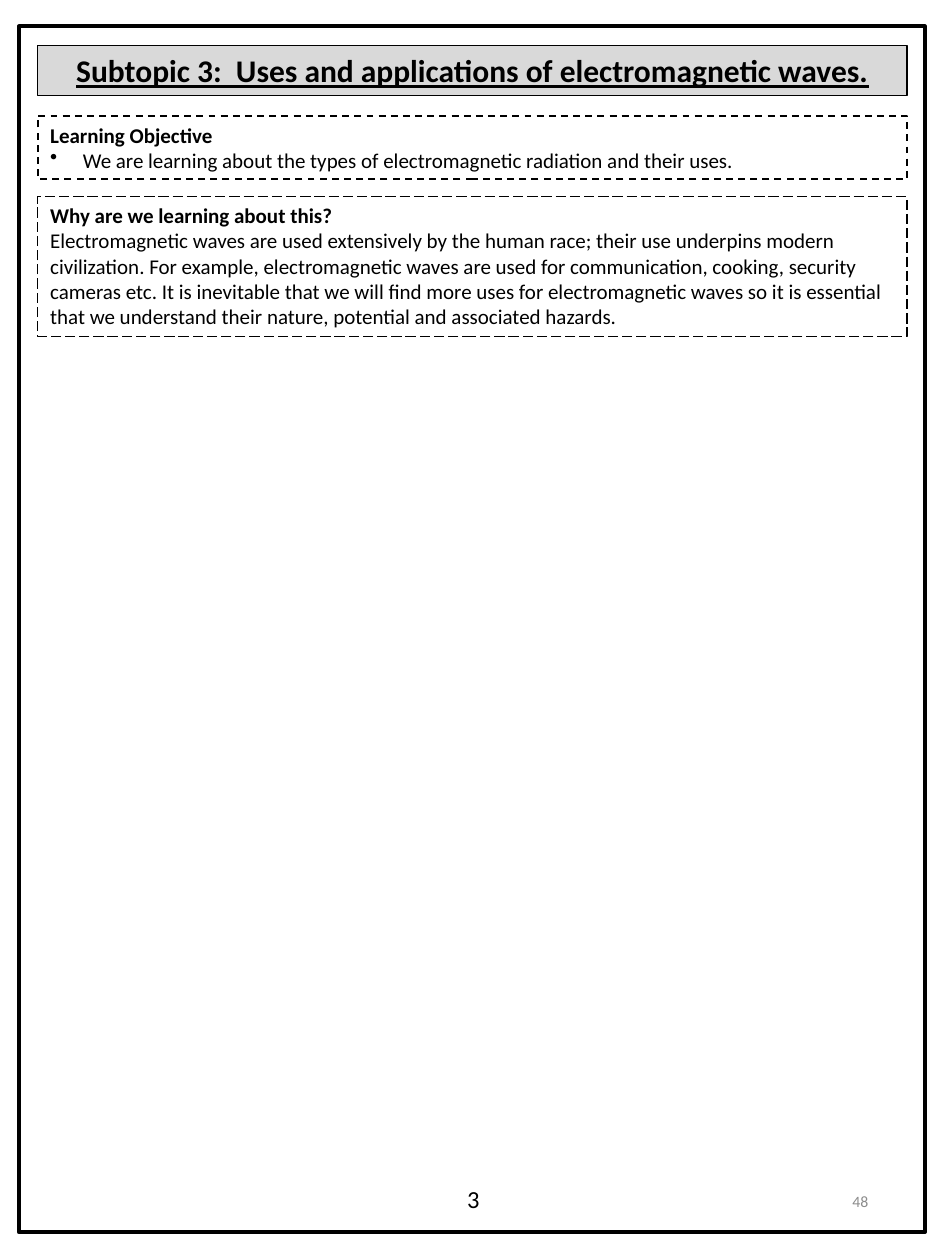
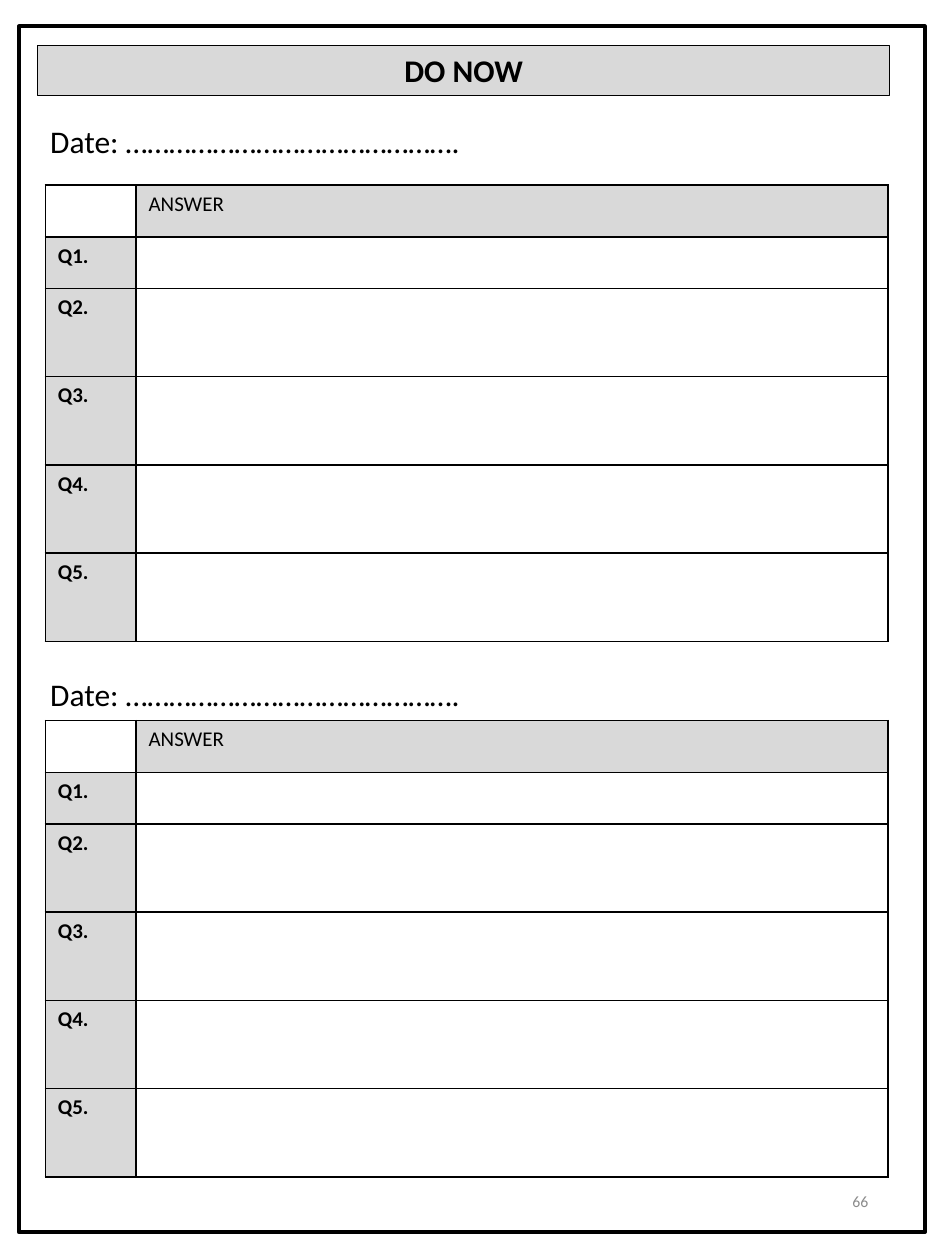
from dataclasses import dataclass
from typing import Any, Optional

import lxml.etree
import pptx
import pptx.dml.color
import pptx.enum.dml
import pptx.enum.shapes
import pptx.enum.text
import pptx.oxml.ns
import pptx.util

Inches = pptx.util.Inches
Pt = pptx.util.Pt
Align = pptx.enum.text.PP_ALIGN
Anchor = pptx.enum.text.MSO_ANCHOR
Dash = pptx.enum.dml.MSO_LINE

COLORS = {"ink": "000000", "band": "D9D9D9", "paper": "FFFFFF", "page": "8C8C8C"}
FONT = "Calibri"
MARGIN = 0.3
FULL_WIDTH = 6.9
BULLET_INDENT = Inches(0.26)


@dataclass(frozen=True)
class Line:
    text: str
    size: float = 12
    bold: bool = False
    underline: bool = False
    color: str = "ink"
    align: Any = Align.LEFT
    bullet: bool = False


@dataclass(frozen=True)
class Panel:
    left: float
    top: float
    width: float
    height: float
    lines: tuple[Line, ...] = ()
    border: Optional[float] = None
    dash: Any = None
    fill: Optional[str] = None
    anchor: Any = Anchor.TOP


@dataclass(frozen=True)
class AnswerSheet:
    date_top: float
    grid_top: float


def rgb(name: str) -> pptx.dml.color.RGBColor:
    return pptx.dml.color.RGBColor.from_string(COLORS[name])


def add_xml(parent: Any, tag: str, **attributes: str) -> Any:
    return lxml.etree.SubElement(parent, pptx.oxml.ns.qn(tag), attributes)


def write_line(paragraph: Any, line: Line) -> None:
    paragraph.text = line.text
    paragraph.alignment = line.align
    font = paragraph.font
    font.name, font.size, font.bold = FONT, Pt(line.size), line.bold
    font.underline = line.underline
    font.color.rgb = rgb(line.color)
    if line.bullet:
        properties = paragraph._p.get_or_add_pPr()
        properties.set("marL", str(BULLET_INDENT))
        properties.set("indent", str(-BULLET_INDENT))
        bullet = lxml.etree.Element(pptx.oxml.ns.qn("a:buChar"), char="•")
        properties.insert(0, bullet)


def draw_panel(slide: Any, panel: Panel) -> None:
    place = [Inches(v) for v in (panel.left, panel.top, panel.width, panel.height)]
    if panel.border is None:
        shape = slide.shapes.add_textbox(*place)
    else:
        shape = slide.shapes.add_shape(
            pptx.enum.shapes.MSO_SHAPE.RECTANGLE, *place)
        shape.shadow.inherit = False
        shape.line.color.rgb = rgb("ink")
        shape.line.width = Pt(panel.border)
        if panel.dash is not None:
            shape.line.dash_style = panel.dash
        if panel.fill:
            shape.fill.solid()
            shape.fill.fore_color.rgb = rgb(panel.fill)
        else:
            shape.fill.background()
    frame = shape.text_frame
    frame.word_wrap = True
    frame.vertical_anchor = panel.anchor
    for index, line in enumerate(panel.lines):
        write_line(frame.add_paragraph() if index else frame.paragraphs[0], line)


def draw_border(cell: Any) -> None:
    properties = cell._tc.get_or_add_tcPr()
    for side in ("a:lnL", "a:lnR", "a:lnT", "a:lnB"):
        edge = add_xml(properties, side, w=str(Pt(1)))
        add_xml(add_xml(edge, "a:solidFill"), "a:srgbClr", val=COLORS["ink"])


# Shared page parts: frame, title band, page number
def add_page(deck: Any, title: Line, title_width: float, number: str) -> Any:
    slide = deck.slides.add_slide(deck.slide_layouts[6])
    draw_panel(slide, Panel(0.15, 0.21, 7.19, 9.57, border=2.25))
    draw_panel(slide, Panel(MARGIN, 0.36, title_width, 0.4, (title,),
                            border=0.75, fill="band"))
    page_number = Line(number, 9, color="page", align=Align.RIGHT)
    draw_panel(slide, Panel(5.3, 9.27, 1.69, 0.53, (page_number,),
                            anchor=Anchor.MIDDLE))
    return slide


def draw_answer_sheet(slide: Any, sheet: AnswerSheet) -> None:
    date = Line("Date: ……………………………………….", 18)
    draw_panel(slide, Panel(MARGIN, sheet.date_top, 5.15, 0.4, (date,)))

    questions = [f"Q{number}." for number in range(1, 6)]
    rows = [("", "ANSWER")] + [(question, "") for question in questions]
    heights = [0.41] * 2 + [0.7] * 4
    widths = [0.72, 5.97]
    grid = slide.shapes.add_table(
        len(rows), len(widths), Inches(0.36), Inches(sheet.grid_top),
        Inches(sum(widths)), Inches(sum(heights))).table
    grid.first_row = grid.horz_banding = False
    for column, width in zip(grid.columns, widths):
        column.width = Inches(width)
    for r, (texts, height) in enumerate(zip(rows, heights)):
        grid.rows[r].height = Inches(height)
        for c, text in enumerate(texts):
            cell = grid.cell(r, c)
            write_line(cell.text_frame.paragraphs[0], Line(text, bold=c == 0))
            draw_border(cell)
            cell.fill.solid()
            cell.fill.fore_color.rgb = rgb("band" if text else "paper")


def build_subtopic(deck: Any) -> None:
    title = Line("Subtopic 3:  Uses and applications of electromagnetic waves.",
                 18, bold=True, underline=True, align=Align.CENTER)
    slide = add_page(deck, title, FULL_WIDTH, "48")
    objective = (
        Line("Learning Objective", bold=True),
        Line("We are learning about the types of electromagnetic radiation "
             "and their uses.", bullet=True),
    )
    reason = (
        Line("Why are we learning about this?", bold=True),
        Line("Electromagnetic waves are used extensively by the human race; "
             "their use underpins modern civilization. For example, "
             "electromagnetic waves are used for communication, cooking, "
             "security cameras etc. It is inevitable that we will find more "
             "uses for electromagnetic waves so it is essential that we "
             "understand their nature, potential and associated hazards."),
    )
    for panel in (
        Panel(MARGIN, 0.92, FULL_WIDTH, 0.5, objective, 1, Dash.DASH),
        Panel(MARGIN, 1.56, FULL_WIDTH, 1.11, reason, 0.75, Dash.LONG_DASH),
        Panel(3.61, 9.35, 0.53, 0.34, (Line("3", 14),)),
    ):
        draw_panel(slide, panel)


def build_do_now(deck: Any) -> None:
    title = Line("DO NOW", 18, bold=True, align=Align.CENTER)
    slide = add_page(deck, title, 6.76, "66")
    for sheet in (AnswerSheet(0.92, 1.47), AnswerSheet(5.31, 5.72)):
        draw_answer_sheet(slide, sheet)


def main() -> None:
    deck = pptx.Presentation()
    deck.slide_width, deck.slide_height = Inches(7.5), Inches(10)
    build_subtopic(deck)
    build_do_now(deck)
    deck.save("out.pptx")


if __name__ == "__main__":
    main()
